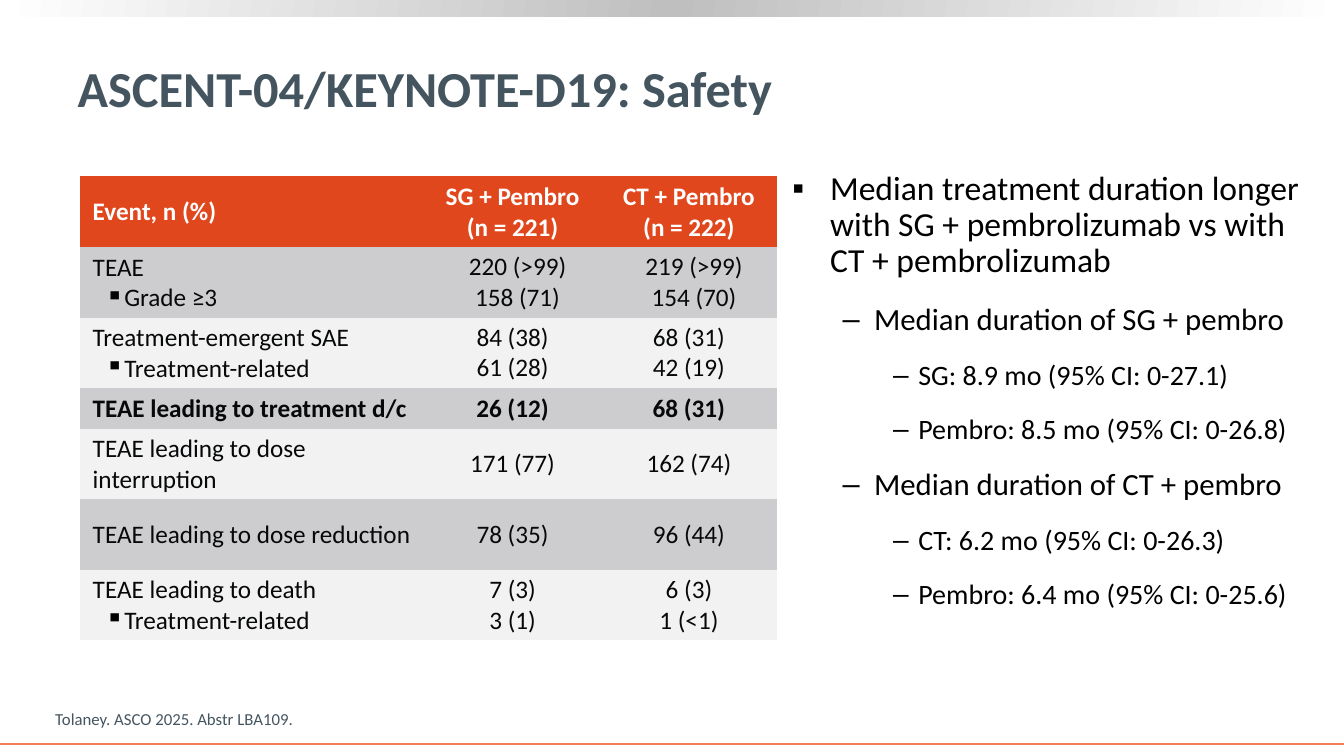
"""Build the ASCENT-04/KEYNOTE-D19 safety slide."""
from dataclasses import dataclass

from lxml import etree
from copy import deepcopy
from pptx import Presentation
from pptx import util as u
from pptx.dml import color as dml
from pptx.enum import shapes, text
from pptx.oxml import ns
from pptx.slide import Slide
from pptx.text import text as t


@dataclass(frozen=True)
class Theme:
    font: str = "Calibri"
    slate: str = "455560"
    black: str = "000000"
    ink: str = "07080A"
    white: str = "FFFFFF"
    silver: str = "BFBFBF"
    header: str = "E1471D"
    rule: str = "F47D55"
    bands: tuple[str, str] = ("CDCDCF", "F2F2F2")
    title_size: int = 36
    table_size: int = 18
    footnote_size: int = 12


@dataclass(frozen=True)
class Box:
    left: float
    top: float
    width: float
    height: float

    def lengths(self) -> tuple[u.Pt, ...]:
        return tuple(u.Pt(value) for value in (self.left, self.top, self.width, self.height))


@dataclass(frozen=True)
class Bullet:
    symbol: str
    margin: float
    hang: float
    size: int


@dataclass(frozen=True)
class Point:
    level: int
    wording: str


@dataclass(frozen=True)
class Event:
    label: str
    sg: tuple[str, ...]
    ct: tuple[str, ...]
    detail: str = ""
    bold: bool = False
    insets: tuple[float, ...] = (3.6, 1.44, 3.6, 1.44)
    height: float = 50.4


THEME = Theme()
SLIDE_WIDTH, SLIDE_HEIGHT = 960, 540
TOP_BAR = Box(0, 0, SLIDE_WIDTH, 11.5)
RULE_TOP = 531.4
TITLE_BOX = Box(48.24, 18.72, 856, 87.12)
BODY_BOX = Box(558.72, 118.8, 377.28, 366.5)
FOOTNOTE_BOX = Box(32.4, 502.56, 630.7, 21.6)
TABLE_BOX = Box(56.88, 126, 498.24, 331.2)
COLUMN_WIDTHS = (246.24, 126, 126)
LABEL_INSETS = (9.36, 3.6, 9.36, 3.6)
HEADINGS = ("Event, n (%)", "SG + Pembro\n(n = 221)", "CT + Pembro\n(n = 222)")
DETAIL_BULLET = Bullet("▪", 22.5, 13.5, THEME.table_size)
BODY_BULLETS = (Bullet("▪", 27, 27, 24), Bullet("‒", 58.5, 22.5, 22), Bullet("‒", 90, 18, 20))
EVENTS = (
    Event("TEAE", ("220 (>99)", "158 (71)"), ("219 (>99)", "154 (70)"), "Grade ≥3",
          insets=(7.2, 0.72, 0, 0.72)),
    Event("Treatment-emergent SAE", ("84 (38)", "61 (28)"), ("68 (31)", "42 (19)"),
          "Treatment-related"),
    Event("TEAE leading to treatment d/c", ("26 (12)",), ("68 (31)",), bold=True, height=28.8),
    Event("TEAE leading to dose interruption", ("171 (77)",), ("162 (74)",)),
    Event("TEAE leading to dose reduction", ("78 (35)",), ("96 (44)",)),
    Event("TEAE leading to death", ("7 (3)", "3 (1)"), ("6 (3)", "1 (<1)"), "Treatment-related"),
)
POINTS = (
    Point(0, "Median treatment duration longer with SG + pembrolizumab vs with CT + pembrolizumab"),
    Point(1, "Median duration of SG + pembro"),
    Point(2, "SG: 8.9 mo (95% CI: 0-27.1)"),
    Point(2, "Pembro: 8.5 mo (95% CI: 0-26.8)"),
    Point(1, "Median duration of CT + pembro"),
    Point(2, "CT: 6.2 mo (95% CI: 0-26.3)"),
    Point(2, "Pembro: 6.4 mo (95% CI: 0-25.6)"),
)


def rgb(value: str) -> dml.RGBColor:
    return dml.RGBColor.from_string(value)


def format_runs(paragraph: t._Paragraph, size: int, color: str, bold: bool = False) -> None:
    for run in paragraph.runs:
        run.font.name = THEME.font
        run.font.size = u.Pt(size)
        run.font.bold = bold
        run.font.color.rgb = rgb(color)


def add_bullet(paragraph: t._Paragraph, bullet: Bullet) -> None:
    properties = paragraph._p.get_or_add_pPr()
    properties.set("marL", str(u.Pt(bullet.margin)))
    properties.set("indent", str(u.Pt(-bullet.hang)))
    color = etree.SubElement(properties, ns.qn("a:buClr"))
    etree.SubElement(color, ns.qn("a:srgbClr"), val=THEME.black)
    etree.SubElement(properties, ns.qn("a:buChar"), char=bullet.symbol)


def next_paragraph(frame: t.TextFrame, index: int) -> t._Paragraph:
    return frame.add_paragraph() if index else frame.paragraphs[0]


def place(shape, box: Box) -> None:
    shape.left, shape.top, shape.width, shape.height = box.lengths()


def add_frame(slide: Slide) -> None:
    bar = slide.shapes.add_shape(shapes.MSO_SHAPE.RECTANGLE, *TOP_BAR.lengths())
    bar.shadow.inherit = False
    bar.line.fill.background()
    bar.fill.gradient()
    bar.fill.gradient_angle = 170
    first, last = bar.fill.gradient_stops
    first.color.rgb = rgb(THEME.silver)
    first.position = 0.5
    stops = bar._element.find(".//" + ns.qn("a:gsLst"))
    middle = deepcopy(stops[0])
    first.color.rgb = last.color.rgb = rgb(THEME.white)
    first.position, last.position = 0, 1
    stops.insert(1, middle)

    rule = slide.shapes.add_connector(shapes.MSO_CONNECTOR.STRAIGHT, 0, u.Pt(RULE_TOP),
                                      u.Pt(SLIDE_WIDTH), u.Pt(RULE_TOP))
    rule.line.color.rgb = rgb(THEME.rule)
    rule.line.width = u.Pt(1.5)
    etree.SubElement(rule._element.spPr, ns.qn("a:effectLst"))


def fill_title(slide: Slide) -> None:
    title = slide.shapes.title
    place(title, TITLE_BOX)
    frame = title.text_frame
    frame.text = "ASCENT-04/KEYNOTE-D19: Safety"
    frame.auto_size = text.MSO_AUTO_SIZE.NONE
    frame.vertical_anchor = text.MSO_ANCHOR.MIDDLE
    frame.paragraphs[0].alignment = text.PP_ALIGN.LEFT
    format_runs(frame.paragraphs[0], THEME.title_size, THEME.slate, True)


def fill_body(slide: Slide) -> None:
    body = slide.placeholders[1]
    place(body, BODY_BOX)
    body.text_frame.auto_size = text.MSO_AUTO_SIZE.NONE
    for index, point in enumerate(POINTS):
        paragraph = next_paragraph(body.text_frame, index)
        paragraph.text = point.wording
        paragraph.level = point.level
        paragraph.line_spacing = 0.9
        paragraph.space_before = u.Pt(10 if index else 0)
        paragraph.space_after = u.Pt(7)
        bullet = BODY_BULLETS[point.level]
        add_bullet(paragraph, bullet)
        format_runs(paragraph, bullet.size, THEME.black)


def fill_cell(cell, lines: tuple[str, ...], fill: str, color: str, bold: bool,
              insets: tuple[float, ...], centered: bool) -> None:
    cell.fill.solid()
    cell.fill.fore_color.rgb = rgb(fill)
    cell.vertical_anchor = text.MSO_ANCHOR.MIDDLE
    cell.margin_left, cell.margin_top, cell.margin_right, cell.margin_bottom = map(u.Pt, insets)
    for index, line in enumerate(lines):
        paragraph = next_paragraph(cell.text_frame, index)
        paragraph.text = line
        paragraph.alignment = text.PP_ALIGN.CENTER if centered else text.PP_ALIGN.LEFT
        if index and not centered:
            add_bullet(paragraph, DETAIL_BULLET)
        format_runs(paragraph, THEME.table_size, color, bold)


def add_safety_table(slide: Slide) -> None:
    table = slide.shapes.add_table(len(EVENTS) + 1, len(HEADINGS), *TABLE_BOX.lengths()).table
    table.horz_banding = False
    style = table._tbl.tblPr.find(ns.qn("a:tableStyleId"))
    style.text = "{2D5ABB26-0587-4C30-8999-92F81FD0307C}"
    for column, width in zip(table.columns, COLUMN_WIDTHS):
        column.width = u.Pt(width)
    table.rows[0].height = u.Pt(50.4)
    for column, heading in enumerate(HEADINGS):
        fill_cell(table.cell(0, column), (heading,), THEME.header, THEME.white, True,
                  LABEL_INSETS, column > 0)
    for row, event in enumerate(EVENTS, 1):
        table.rows[row].height = u.Pt(event.height)
        labels = (event.label, event.detail) if event.detail else (event.label,)
        for column, lines in enumerate((labels, event.sg, event.ct)):
            fill_cell(table.cell(row, column), lines, THEME.bands[(row - 1) % 2], THEME.ink,
                      event.bold, event.insets if column else LABEL_INSETS, column > 0)


def add_footnote(slide: Slide) -> None:
    frame = slide.shapes.add_textbox(*FOOTNOTE_BOX.lengths()).text_frame
    frame.word_wrap = True
    frame.vertical_anchor = text.MSO_ANCHOR.BOTTOM
    frame.text = "Tolaney. ASCO 2025. Abstr LBA109."
    format_runs(frame.paragraphs[0], THEME.footnote_size, THEME.slate)


def main() -> None:
    presentation = Presentation()
    presentation.slide_width, presentation.slide_height = u.Pt(SLIDE_WIDTH), u.Pt(SLIDE_HEIGHT)
    slide = presentation.slides.add_slide(presentation.slide_layouts[1])
    for draw in (add_frame, fill_title, fill_body, add_footnote, add_safety_table):
        draw(slide)
    presentation.save("out.pptx")


if __name__ == "__main__":
    main()
